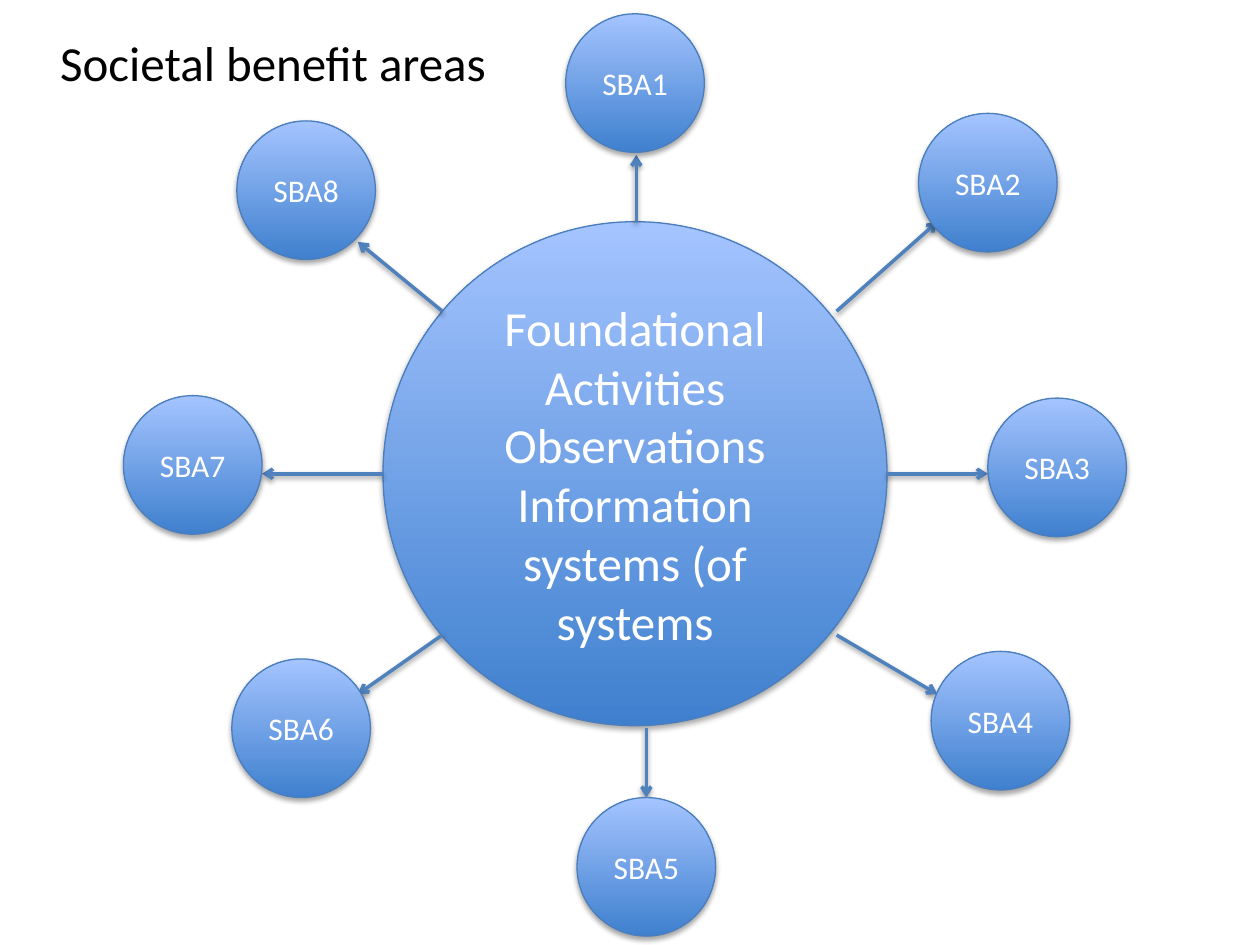
"""Draw a hub of foundational activities with eight societal benefit areas."""
from typing import NamedTuple

from lxml import etree
from pptx import Presentation
from pptx import util as u
from pptx.dml.color import RGBColor
from pptx.enum import shapes, text
from pptx.oxml import ns

WIDE, HIGH = u.Inches(10), u.Inches(7.5)
COLS = 100
CELL = WIDE / COLS
FONT = "Calibri"
WHITE, BLACK = "FFFFFF", "000000"
DARK, LIGHT, EDGE, ARROW = "3F80CE", "A4C4FF", "4B7EBC", "4F81BD"


class Spot(NamedTuple):
    """A point in columns and rows of the grid."""
    col: float
    row: float


class Disc(NamedTuple):
    """A circle with its corner, width, lines of text and text size."""
    at: Spot
    size: float
    lines: tuple[str, ...]
    points: int


class Area(NamedTuple):
    """A benefit area: its corner and the arrow that leads to it."""
    at: Spot
    start: Spot
    end: Spot


HUB = Disc(Spot(30.4, 17.6), 40,
           ("Foundational Activities", "Observations",
            "Information systems (of systems"), 28)
AREAS = (
    Area(Spot(44.9, 1.1), Spot(50.5, 17.6), Spot(50.5, 12.3)),
    Area(Spot(72.9, 9), Spot(66.4, 24.7), Spot(74.4, 17.6)),
    Area(Spot(78.4, 31.6), Spot(70.4, 37.6), Spot(78.4, 37.6)),
    Area(Spot(73.9, 51.7), Spot(66.4, 50.4), Spot(74.4, 55.1)),
    Area(Spot(45.8, 63.3), Spot(51.3, 57.8), Spot(51.3, 63.3)),
    Area(Spot(18.4, 52.3), Spot(35.1, 50.4), Spot(28.4, 55.1)),
    Area(Spot(9.8, 31.4), Spot(30.4, 37.6), Spot(20.8, 37.6)),
    Area(Spot(18.8, 9.6), Spot(35.1, 24.7), Spot(28.4, 19.2)),
)


def grid(*cells: float) -> list[int]:
    """Turn grid cells into slide lengths."""
    return [u.Emu(round(cell * CELL)) for cell in cells]


def tint(code: str) -> RGBColor:
    """Turn a hex string into a colour."""
    return RGBColor.from_string(code)


def shade(props, drop: float, alpha: int) -> None:
    """Give shape properties a soft shadow straight below."""
    tag = ns.qn
    for old in props.findall(tag("a:effectLst")):
        props.remove(old)
    group = etree.SubElement(props, tag("a:effectLst"))
    cast = etree.SubElement(
        group, tag("a:outerShdw"), blurRad=str(u.Pt(3.1)),
        dist=str(u.Pt(drop)), dir="5400000", rotWithShape="0")
    hue = etree.SubElement(cast, tag("a:srgbClr"), val=BLACK)
    etree.SubElement(hue, tag("a:alpha"), val=str(alpha * 1000))


def write(frame, lines: tuple[str, ...], size: int, hue: str, align) -> None:
    """Fill a text frame and format its runs."""
    frame.text = "\n".join(lines)
    for para in frame.paragraphs:
        para.alignment = align
        for run in para.runs:
            run.font.name = FONT
            run.font.size = u.Pt(size)
            run.font.color.rgb = tint(hue)


def draw_disc(slide, disc: Disc) -> None:
    """Draw a shaded circle with centred text."""
    shape = slide.shapes.add_shape(
        shapes.MSO_SHAPE.OVAL, *grid(*disc.at, disc.size, disc.size))
    shape.fill.gradient()
    shape.fill.gradient_angle = 90
    for stop, hue, place in zip(shape.fill.gradient_stops, (DARK, LIGHT), (0, 1)):
        stop.color.rgb = tint(hue)
        stop.position = place
    shape.line.color.rgb = tint(EDGE)
    shape.line.width = u.Pt(0.75)
    shade(shape._element.spPr, 1.8, 35)
    frame = shape.text_frame
    frame.word_wrap = True
    frame.vertical_anchor = text.MSO_ANCHOR.MIDDLE
    write(frame, disc.lines, disc.points, WHITE, text.PP_ALIGN.CENTER)


def draw_arrow(slide, start: Spot, end: Spot) -> None:
    """Draw an arrow between two spots."""
    line = slide.shapes.add_connector(
        shapes.MSO_CONNECTOR.STRAIGHT, *grid(*start, *end))
    line.line.color.rgb = tint(ARROW)
    line.line.width = u.Pt(2)
    etree.SubElement(line.line._get_or_add_ln(), ns.qn("a:tailEnd"), type="arrow")
    shade(line._element.spPr, 1.6, 38)


def draw_title(slide, words: str) -> None:
    """Write the slide's heading."""
    box = slide.shapes.add_textbox(*grid(3.8, 2.1, 36.3, 5.7))
    box.text_frame.word_wrap = False
    box.text_frame.auto_size = text.MSO_AUTO_SIZE.SHAPE_TO_FIT_TEXT
    write(box.text_frame, (words,), 28, BLACK, text.PP_ALIGN.LEFT)


def main() -> None:
    """Build and save the slide."""
    deck = Presentation()
    deck.slide_width, deck.slide_height = WIDE, HIGH
    slide = deck.slides.add_slide(deck.slide_layouts[6])
    draw_disc(slide, HUB)
    for area in AREAS:
        draw_arrow(slide, area.start, area.end)
    for rank, area in enumerate(AREAS, 1):
        draw_disc(slide, Disc(area.at, 11, (f"SBA{rank}",), 18))
    draw_title(slide, "Societal benefit areas")
    deck.save("out.pptx")


if __name__ == "__main__":
    main()
